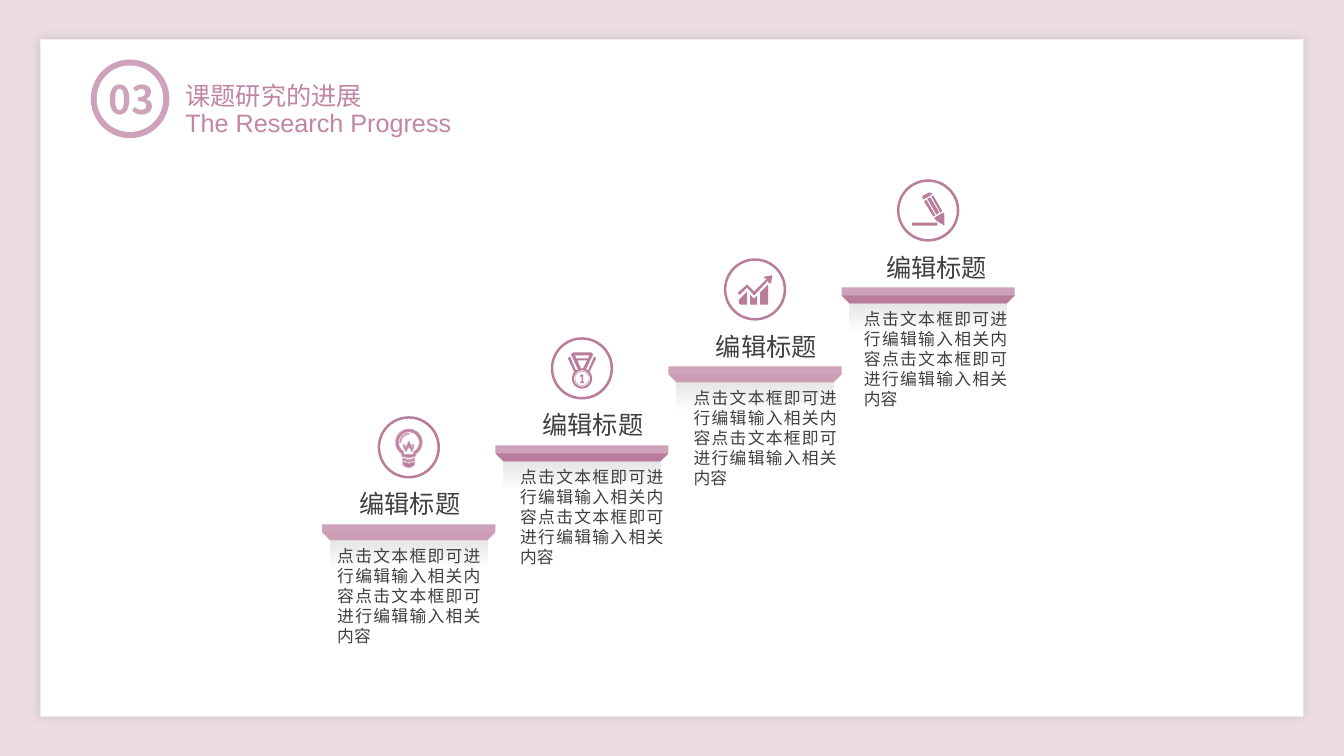
"""Build the research progress slide: four rising steps, each with an icon, caption and text."""
import math
from dataclasses import dataclass

from lxml import etree
from pptx import Presentation
from pptx import util as u
from pptx.dml import color as c
from pptx.enum import shapes, text
from pptx.oxml import ns

Point = tuple[float, float]
Contour = list[Point]


@dataclass(frozen=True)
class Theme:
    background: str = "ECDCE4"
    paper: str = "FFFFFF"
    light: str = "CEA2B8"
    dark: str = "BA7C9B"
    heading: str = "C086A3"
    ink: str = "404040"
    shade: str = "000000"
    shadow: str = "808080"
    cjk: str = "Noto Sans CJK SC"
    latin: str = "Arial"
    number_size: float = 28
    heading_size: float = 18
    body_size: float = 12


@dataclass(frozen=True)
class Step:
    icon: list[Contour]
    text_indent: float
    edge_opacity: int
    icon_line: bool = False


THEME = Theme()
CAPTION = "编辑标题"
BODY = "点击文本框即可进行编辑输入相关内容点击文本框即可进行编辑输入相关内容"
FIRST_LEFT, FIRST_TOP = 230.2, 374.5
STEP_RIGHT, STEP_UP = 123.65, 56.4
BAND_HEIGHT, BEVEL = 11.4, 5.7
RING_SIZE = 44.5


def arc(x: float, y: float, radius: float, start: float = 0, end: float = 360) -> Contour:
    angles = [math.radians(start + (end - start) * i / 36) for i in range(37)]
    return [(x + radius * math.cos(a), y + radius * math.sin(a)) for a in angles]


BULB = [
    arc(22.3, 18.7, 9.4, 122, 418) + [(26.6, 28.8), (22.3, 29.5), (17.3, 28.8)],
    arc(22.3, 18.7, 7.5, 122, 418) + [(25.2, 27.5), (18.7, 27.5)],
    arc(22.3, 18.7, 6.4, 180, 270) + arc(22.3, 18.7, 5.7, 270, 180),
    [(24.5, 22.3), (22.3, 18), (20.2, 22.3), (18.7, 20.2), (18, 20.9), (20.2, 25.2),
     (22.3, 21.6), (24.5, 25.2), (25.9, 20.9), (25.2, 20.2)],
    [(18, 30.2), (22.3, 31.2), (26.2, 30.2), (26.2, 31.7), (22.3, 32.4), (18, 31.7)],
    [(18, 32.6), (22.3, 33.6), (26.2, 32.6), (26.2, 34.6), (24.5, 36), (22.3, 36.7),
     (19.6, 36), (18, 34.6)],
]
MEDAL = [
    [(32.4, 15.1), (31, 13.7), (26.6, 23.8), (25.2, 23), (30.2, 12.2), (28.8, 10.8),
     (16.2, 10.8), (14.4, 12.2), (19.4, 23), (18, 23.8), (13.7, 13.7), (12.2, 15.1),
     (16.6, 24.5)] + arc(22.3, 29.5, 7.2, 222, -42),
    [(17.3, 13), (27.6, 13), (26.6, 15.1), (18.2, 15.1)],
    [(18.9, 16.6), (25.9, 16.6), (23, 22.3), (21.6, 22.3)],
    arc(22.3, 29.5, 5.8),
    arc(22.3, 29.5, 5.2),
    arc(22.3, 29.5, 4.9),
    [(23, 26.6), (22.3, 26.6), (20.9, 27.4), (20.9, 28.1), (22, 28.1), (22, 31.7),
     (21.2, 31.7), (21.2, 32.8), (23.8, 32.8), (23.8, 31.7), (23, 31.7)],
]
CHART = [
    [(10.8, 32.4), (12, 33.1), (16.6, 33.1), (16.6, 23.8), (10.8, 29.5)],
    [(18.7, 25.9), (18.7, 33.1), (23.8, 33.1), (23.8, 26.6), (21.6, 28.8)],
    [(25.9, 24.5), (25.9, 33.1), (31, 33.1), (31.7, 32.4), (31.7, 18.7)],
    [(29.5, 13), (28.6, 13.8), (29.5, 14.6), (31, 14.4), (21.6, 23.8), (16.6, 18.7),
     (10.1, 24.5), (10.3, 25.6), (11.5, 25.9), (16.6, 20.9), (21.6, 26.6), (31.7, 15.8),
     (31.7, 17.3), (33, 18), (33.8, 17.3), (34.6, 12.2)],
]
PENCIL = [
    [(27.4, 28.8), (28.1, 29.5), (33.8, 33.1), (33.8, 25.2), (33.1, 23.8), (26.6, 27.4)],
    [(31, 23.8), (32.4, 23), (25.9, 11.5), (24.5, 12.2)],
    [(30.2, 23.8), (23.8, 13), (21.6, 13.7), (28.1, 25.2)],
    [(19.4, 15.8), (25.9, 26.6), (27.4, 25.9), (20.9, 14.4)],
    [(18.7, 14.4), (25.2, 10.8), (24.5, 9.8), (23, 9.4), (18.7, 11.5), (18, 13)],
    [(10.8, 31), (28.8, 31), (28.8, 33.1), (10.8, 33.1)],
]
STEPS = [
    Step(BULB, 3.6, 15, icon_line=True),
    Step(MEDAL, 10.6, 100),
    Step(CHART, 10.8, 15),
    Step(PENCIL, 8.9, 100),
]


def set_opacity(shape, *percents: int) -> None:
    for colour, percent in zip(shape._element.spPr.iter(ns.qn("a:srgbClr")), percents):
        etree.SubElement(colour, ns.qn("a:alpha"), val=str(percent * 1000))


def paint(shape, colour: str) -> None:
    shape.shadow.inherit = False
    shape.fill.solid()
    shape.fill.fore_color.rgb = c.RGBColor.from_string(colour)
    shape.line.fill.background()


def add_preset(slide, kind, left: float, top: float, width: float, height: float, colour: str):
    shape = slide.shapes.add_shape(kind, u.Pt(left), u.Pt(top), u.Pt(width), u.Pt(height))
    paint(shape, colour)
    return shape


def add_outline(slide, contours: list[Contour], left: float, top: float, colour: str):
    """Draw closed contours, given in points from left and top, as one shape."""
    scaled = [[(x * 100, y * 100) for x, y in contour] for contour in contours]
    builder = slide.shapes.build_freeform(*scaled[0][0], scale=u.Pt(1) / 100)
    for index, contour in enumerate(scaled):
        if index:
            builder.move_to(*contour[0])
        builder.add_line_segments(contour[1:], close=True)
    shape = builder.convert_to_shape(u.Pt(left), u.Pt(top))
    paint(shape, colour)
    return shape


def write_text(shape, words: str, *, size: float, colour: str, font: str = THEME.cjk,
               align=text.PP_ALIGN.LEFT, bold: bool = False, wrap: bool = True,
               spacing: float = 1.0) -> None:
    frame = shape.text_frame
    frame.word_wrap = wrap
    frame.auto_size = text.MSO_AUTO_SIZE.SHAPE_TO_FIT_TEXT
    frame.vertical_anchor = text.MSO_ANCHOR.TOP
    paragraph = frame.paragraphs[0]
    paragraph.alignment = align
    paragraph.line_spacing = spacing
    run = paragraph.add_run()
    run.text = words
    run.font.size = u.Pt(size)
    run.font.bold = bold
    run.font.color.rgb = c.RGBColor.from_string(colour)
    run.font.name = font
    etree.SubElement(run.font._element, ns.qn("a:ea"), typeface=font)


def add_text(slide, left: float, top: float, width: float, height: float, words: str, **style):
    box = slide.shapes.add_textbox(u.Pt(left), u.Pt(top), u.Pt(width), u.Pt(height))
    write_text(box, words, **style)


def add_paper(slide) -> None:
    paper = add_preset(slide, shapes.MSO_SHAPE.RECTANGLE, 28.8, 28.1, 902.2, 483.8, THEME.paper)
    effects = paper._element.spPr.find(ns.qn("a:effectLst"))
    shadow = etree.SubElement(effects, ns.qn("a:outerShdw"), blurRad=str(u.Pt(8)), dist="0",
                              dir="0", algn="ctr", rotWithShape="0")
    colour = etree.SubElement(shadow, ns.qn("a:srgbClr"), val=THEME.shadow)
    etree.SubElement(colour, ns.qn("a:alpha"), val="32000")


def add_header(slide) -> None:
    oval = shapes.MSO_SHAPE.OVAL
    add_preset(slide, oval, 64.8, 42.5, 56.2, 56.2, THEME.light)
    add_preset(slide, oval, 69.1, 46.8, 47.5, 47.5, THEME.paper)
    add_text(slide, 68.4, 50.4, 51.8, 41, "03", size=THEME.number_size, colour=THEME.light,
             align=text.PP_ALIGN.CENTER, bold=True)
    title = slide.shapes.title
    title.left, title.top, title.width, title.height = map(u.Pt, (125.3, 32.4, 141.8, 44.6))
    write_text(title, "课题研究的进展", size=THEME.heading_size, colour=THEME.heading,
               wrap=False, spacing=2.0)
    title._element.getparent().append(title._element)
    add_text(slide, 125.3, 73.4, 395.3, 28.8, "The Research Progress", font=THEME.latin,
             size=THEME.heading_size, colour=THEME.heading)


def add_shade(slide, left: float, top: float) -> None:
    shade = add_preset(slide, shapes.MSO_SHAPE.RECTANGLE, left, top, 112.3, 39.6, THEME.shade)
    shade.fill.gradient()
    shade.fill.gradient_angle = 270
    for stop, position in zip(shade.fill.gradient_stops, (0, 0.5)):
        stop.color.rgb = c.RGBColor.from_string(THEME.shade)
        stop.position = position
    set_opacity(shade, 10, 0)


def add_step(slide, step: Step, left: float, top: float) -> None:
    bottom = top + BAND_HEIGHT
    edge = [(STEP_RIGHT, BEVEL), (STEP_RIGHT - BEVEL, BAND_HEIGHT), (BEVEL, BAND_HEIGHT),
            (0, BEVEL)]
    add_shade(slide, left + BEVEL, bottom)
    add_outline(slide, [[(0, 0), (STEP_RIGHT, 0), *edge]], left, top, THEME.light)
    set_opacity(add_outline(slide, [edge], left, top, THEME.dark), step.edge_opacity)
    ring_left, ring_top = left + 39.6, top - 77.2
    ring = add_preset(slide, shapes.MSO_SHAPE.DONUT, ring_left, ring_top, RING_SIZE, RING_SIZE,
                      THEME.dark)
    ring.adjustments[0] = 0.04
    icon = add_outline(slide, step.icon, ring_left, ring_top, THEME.dark)
    if step.icon_line:
        icon.line.color.rgb = c.RGBColor.from_string(THEME.light)
        icon.line.width = u.Pt(0.75)
    text_left = left + step.text_indent
    add_text(slide, text_left, bottom, 116.6, 79.9, BODY, size=THEME.body_size,
             colour=THEME.ink, align=text.PP_ALIGN.JUSTIFY)
    add_text(slide, text_left + 0.7, bottom - 40.3, 116.6, 28.8, CAPTION,
             size=THEME.heading_size, colour=THEME.ink, align=text.PP_ALIGN.CENTER)


def main() -> None:
    presentation = Presentation()
    presentation.slide_width, presentation.slide_height = u.Pt(960), u.Pt(540)
    slide = presentation.slides.add_slide(presentation.slide_layouts.get_by_name("Title Only"))
    slide.background.fill.solid()
    slide.background.fill.fore_color.rgb = c.RGBColor.from_string(THEME.background)
    add_paper(slide)
    add_header(slide)
    for index, step in enumerate(STEPS):
        add_step(slide, step, FIRST_LEFT + index * STEP_RIGHT, FIRST_TOP - index * STEP_UP)
    presentation.save("out.pptx")


if __name__ == "__main__":
    main()
